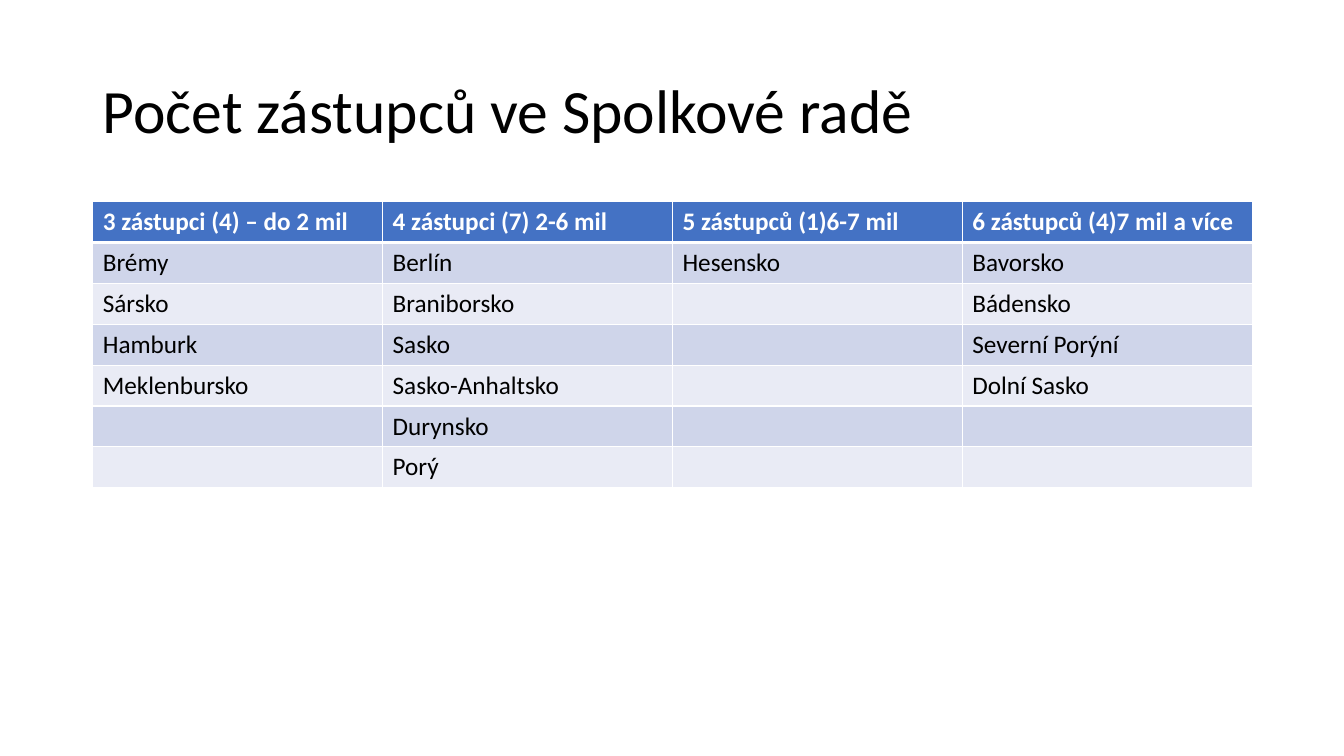
from pptx import Presentation
from pptx.dml.color import RGBColor as RGB
from pptx.enum.text import MSO_ANCHOR as Anchor
from pptx.oxml import parse_xml
from pptx.oxml.ns import nsdecls
from pptx.util import Pt

PX = 9144  # 100 px to the inch
FONT = "Calibri"
BLACK = RGB(0x00, 0x00, 0x00)
WHITE = RGB(0xFF, 0xFF, 0xFF)
BLUE = RGB(0x44, 0x72, 0xC4)
BANDS = [RGB(0xE9, 0xEB, 0xF5), RGB(0xCF, 0xD5, 0xEA)]

TITLE = "Počet zástupců ve Spolkové radě"
GROUPS = {
    "3 zástupci (4) – do 2 mil": ["Brémy", "Sársko", "Hamburk", "Meklenbursko"],
    "4 zástupci (7) 2-6 mil": ["Berlín", "Braniborsko", "Sasko",
                               "Sasko-Anhaltsko", "Durynsko", "Porý"],
    "5 zástupců (1)6-7 mil": ["Hesensko"],
    "6 zástupců (4)7 mil a více": ["Bavorsko", "Bádensko", "Severní Porýní",
                                   "Dolní Sasko"],
}


def style(font, size, color, bold=False):
    font.color.rgb = color
    for key, val in {"name": FONT, "size": Pt(size), "bold": bold}.items():
        setattr(font, key, val)


def edge(cell, side, width):
    cell._tc.get_or_add_tcPr().append(parse_xml(
        f'<a:ln{side} {nsdecls("a")} w="{Pt(width)}"><a:solidFill>'
        f'<a:srgbClr val="{WHITE}"/></a:solidFill></a:ln{side}>'))


def add_title(slide, x, y, w, h):
    frame = slide.shapes.add_textbox(x * PX, y * PX, w * PX, h * PX).text_frame
    frame.word_wrap = True
    frame.vertical_anchor = Anchor.MIDDLE
    para = frame.paragraphs[0]
    para.line_spacing = 0.9
    run = para.add_run()
    run.text = TITLE
    style(run.font, 44, BLACK)


def add_grid(slide, x, y, w, h):
    rows, cols = 1 + max(map(len, GROUPS.values())), len(GROUPS)
    table = slide.shapes.add_table(
        rows, cols, x * PX, y * PX, w * PX, h * PX).table
    table.first_row = True
    table.horz_banding = True
    for c, (head, lands) in enumerate(GROUPS.items()):
        column = [head] + lands
        for r in range(rows):
            cell = table.cell(r, c)
            # White outer frame and a thick rule below the heading
            sides = {"L": c == 0, "R": c == cols - 1, "T": r == 0,
                     "B": 3 if r == 0 else r == rows - 1}
            for side, width in sides.items():
                if width:
                    edge(cell, side, int(width))
            cell.fill.solid()
            cell.fill.fore_color.rgb = BANDS[r % 2] if r else BLUE
            para = cell.text_frame.paragraphs[0]
            if r < len(column):
                run = para.add_run()
                run.text = column[r]
                style(run.font, 18, BLACK if r else WHITE, r == 0)


def main():
    deck = Presentation()
    deck.slide_width, deck.slide_height = 1333 * PX, 750 * PX
    slide = deck.slides.add_slide(deck.slide_layouts[6])
    add_title(slide, 92, 40, 1150, 145)
    add_grid(slide, 92, 200, 1150, 284)
    deck.save("out.pptx")


if __name__ == "__main__":
    main()
